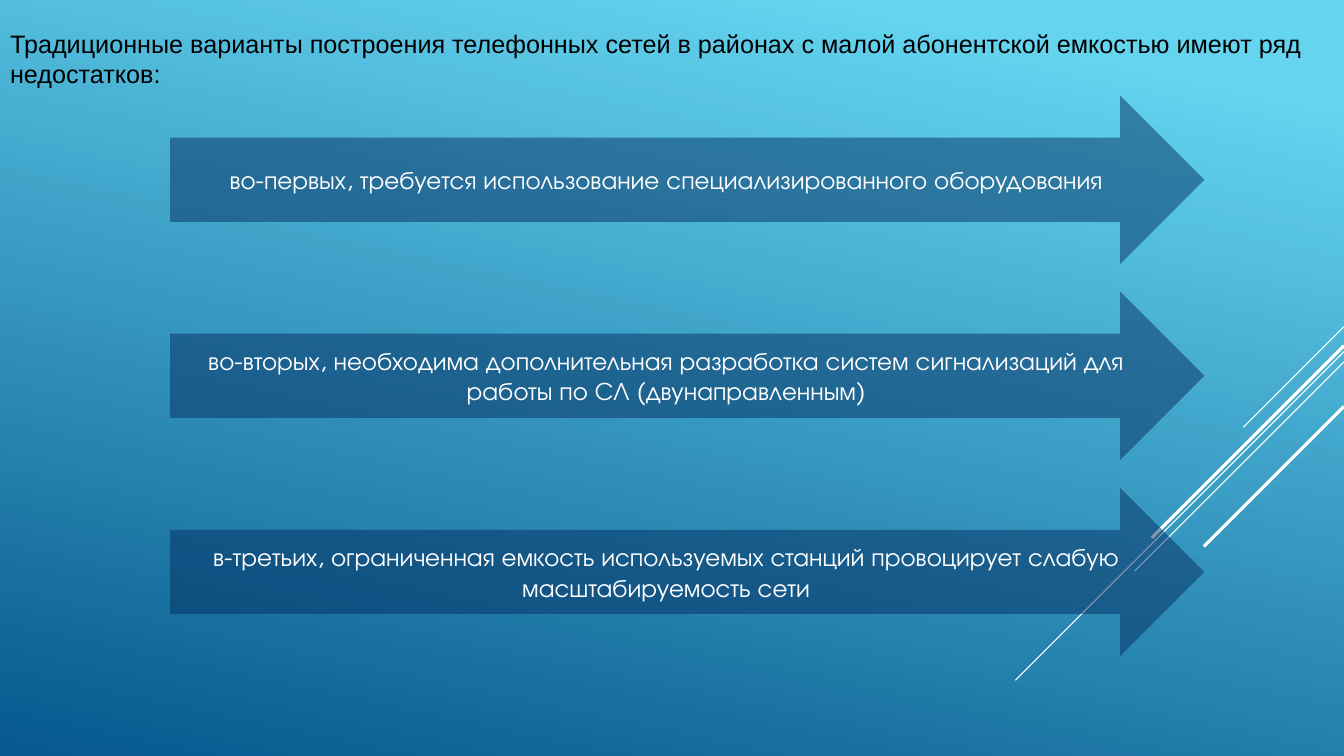
from typing import NamedTuple

from lxml.etree import SubElement
from pptx import Presentation
from pptx.dml.color import RGBColor
from pptx.enum.shapes import MSO_CONNECTOR, MSO_SHAPE
from pptx.enum.text import MSO_ANCHOR as ANCHOR, MSO_AUTO_SIZE as AUTO_SIZE, PP_ALIGN as ALIGN
from pptx.oxml.ns import qn
from pptx.util import Cm, Pt

SKY = RGBColor(0x64, 0xD4, 0xEF)
DEEP_BLUE = RGBColor(0x06, 0x58, 0x8E)
NAVY = RGBColor(0x05, 0x2F, 0x61)
WHITE = RGBColor(0xFF, 0xFF, 0xFF)
BLACK = RGBColor(0, 0, 0)

WIDTH, HEIGHT = 33.87, 19.05
ARROW_LEFT, ARROW_TOP, ARROW_PITCH = 4.29, 2.41, 4.94
ARROW_WIDTH, ARROW_HEIGHT = 26.06, 4.24

TITLE = ("Традиционные варианты построения телефонных сетей в районах "
         "с малой абонентской емкостью имеют ряд недостатков:")
DRAWBACKS = (
    "во-первых, требуется использование специализированного оборудования",
    "во-вторых, необходима дополнительная разработка систем сигнализаций "
    "для работы по СЛ (двунаправленным)",
    "в-третьих, ограниченная емкость используемых станций провоцирует "
    "слабую масштабируемость сети",
)
TITLE_FONT = {"name": "Arial", "size": Pt(18)}
ARROW_FONT = {"name": "TeX Gyre Adventor", "size": Pt(18)}


class Ray(NamedTuple):
    """A 45-degree line running down and left from the right edge."""
    top: float
    reach: float
    weight: float


RAYS = (
    Ray(8.23, 2.54, 0.75),
    Ray(8.86, 8.28, 0.75),
    Ray(9.12, 5.27, 0.75),
    Ray(8.71, 4.84, 2.25),
    Ray(10.24, 3.53, 2.25),
)


def write(tf, text: str, font: dict, color: RGBColor, align, anchor) -> None:
    tf.word_wrap = True
    tf.vertical_anchor = anchor
    p = tf.paragraphs[0]
    p.alignment = align
    r = p.add_run()
    r.text = text
    for name, value in font.items():
        setattr(r.font, name, value)
    r.font.color.rgb = color


def draw_ray(s, ray: Ray) -> None:
    line = s.shapes.add_connector(
        MSO_CONNECTOR.STRAIGHT, Cm(WIDTH), Cm(ray.top),
        Cm(WIDTH - ray.reach), Cm(ray.top + ray.reach))
    line.line.color.rgb = WHITE
    line.line.width = Pt(ray.weight)
    SubElement(line._element.spPr, qn("a:effectLst"))


def draw_arrow(s, row: int, text: str) -> None:
    sp = s.shapes.add_shape(
        MSO_SHAPE.RIGHT_ARROW, Cm(ARROW_LEFT), Cm(ARROW_TOP + row * ARROW_PITCH),
        Cm(ARROW_WIDTH), Cm(ARROW_HEIGHT))
    sp.shadow.inherit = False
    sp.line.fill.background()
    sp.fill.solid()
    sp.fill.fore_color.rgb = NAVY
    # Half-transparent fill
    tint = sp._element.spPr.find(qn("a:solidFill")).find(qn("a:srgbClr"))
    SubElement(tint, qn("a:alpha"), val="50000")
    write(sp.text_frame, text, ARROW_FONT, WHITE, ALIGN.CENTER, ANCHOR.MIDDLE)


def main() -> None:
    prs = Presentation()
    prs.slide_width, prs.slide_height = Cm(WIDTH), Cm(HEIGHT)
    s = prs.slides.add_slide(prs.slide_layouts[5])

    # Background gradient
    fill = s.background.fill
    fill.gradient()
    fill.gradient_angle = 258
    for stop, position, color in zip(fill.gradient_stops, (0.1, 1), (SKY, DEEP_BLUE)):
        stop.position = position
        stop.color.rgb = color

    # Diagonal rays
    for ray in RAYS:
        draw_ray(s, ray)

    # Title
    title = s.shapes.title
    title.left, title.top, title.width, title.height = Cm(0), Cm(0.58), Cm(WIDTH), Cm(1.8)
    write(title.text_frame, TITLE, TITLE_FONT, BLACK, ALIGN.LEFT, ANCHOR.TOP)
    title.text_frame.auto_size = AUTO_SIZE.NONE

    # Drawbacks
    for row, text in enumerate(DRAWBACKS):
        draw_arrow(s, row, text)

    prs.save("out.pptx")


if __name__ == "__main__":
    main()
